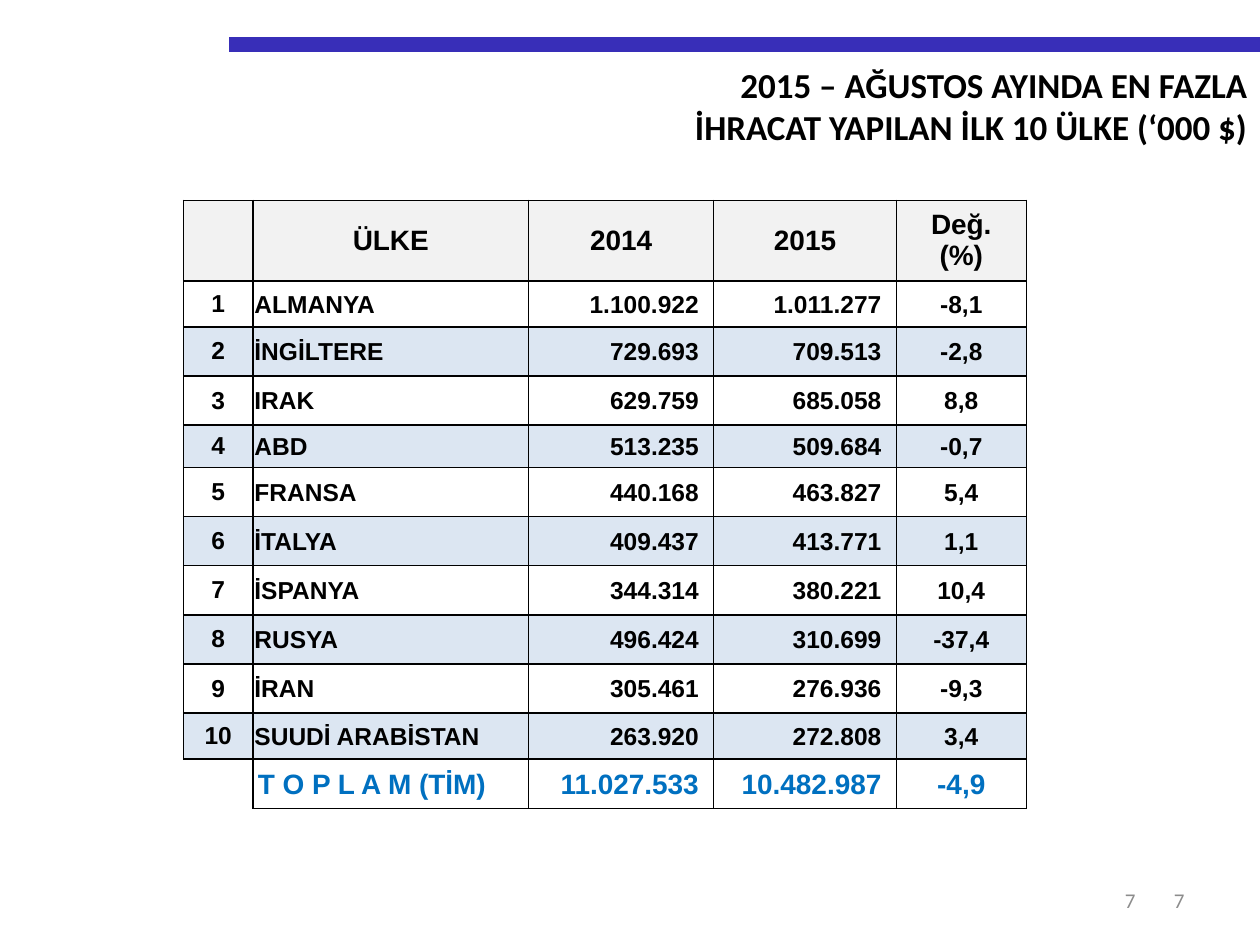
"""Build the slide with the top ten export countries of August 2015."""
from lxml.etree import SubElement
from pptx import Presentation
from pptx.dml.color import RGBColor
from pptx.enum.shapes import MSO_CONNECTOR as Connector
from pptx.enum.text import MSO_ANCHOR as Anchor, PP_ALIGN as Align
from pptx.oxml.ns import qn
from pptx.util import Cm, Pt

BLACK = RGBColor(0x00, 0x00, 0x00)
GRAY = RGBColor(0x8C, 0x8C, 0x8C)
INDIGO = RGBColor(0x38, 0x2E, 0xB8)
BLUE = RGBColor(0x00, 0x70, 0xC0)
HEADER_FILL = RGBColor(0xF2, 0xF2, 0xF2)
BAND_FILL = RGBColor(0xDC, 0xE6, 0xF2)

TITLE = "2015 – AĞUSTOS AYINDA EN FAZLA\nİHRACAT YAPILAN İLK 10 ÜLKE (‘000 $)"
PAGE_NUMBER = "7"
HEADER = ("", "ÜLKE", "2014", "2015", "Değ.\n(%)")
COUNTRIES = [
    ("ALMANYA", "1.100.922", "1.011.277", "-8,1"),
    ("İNGİLTERE", "729.693", "709.513", "-2,8"),
    ("IRAK", "629.759", "685.058", "8,8"),
    ("ABD", "513.235", "509.684", "-0,7"),
    ("FRANSA", "440.168", "463.827", "5,4"),
    ("İTALYA", "409.437", "413.771", "1,1"),
    ("İSPANYA", "344.314", "380.221", "10,4"),
    ("RUSYA", "496.424", "310.699", "-37,4"),
    ("İRAN", "305.461", "276.936", "-9,3"),
    ("SUUDİ ARABİSTAN", "263.920", "272.808", "3,4"),
]
TOTAL = ("", "T O P L A M (TİM)", "11.027.533", "10.482.987", "-4,9")

COLUMN_WIDTHS = (1.4, 5.56, 3.73, 3.68, 2.62)
ROW_HEIGHTS = (1.62, 0.93, 0.99, 0.99, 0.84, 0.99, 0.99, 0.99, 0.99, 0.99, 0.93, 0.99)
COLUMN_ALIGNS = (Align.CENTER, Align.LEFT, Align.RIGHT, Align.RIGHT, Align.CENTER)
WIDE_MARGINS = (0.25, 0.13, 0.25, 0.13)
COLUMN_MARGINS = (
    WIDE_MARGINS,
    (0.03, 0.03, 0.03, 0),
    (0.03, 0.03, 0.3, 0),
    (0.03, 0.03, 0.3, 0),
    (0.03, 0.03, 0.03, 0),
)
TOTAL_LABEL_MARGINS = (0.1, 0.03, 0.03, 0)
ALL_SIDES = ("L", "R", "T", "B")


def write(frame, text, align, size, color, font, bold):
    """Fill a text frame and format all of its paragraphs."""
    frame.text = text
    for para in frame.paragraphs:
        para.alignment = align
        para.font.size = Pt(size)
        for span in para.runs:
            span.font.size = Pt(size)
            span.font.name = font
            span.font.bold = bold
            span.font.color.rgb = color


def add_text(page, place, text, size, color, bold=False, anchor=Anchor.TOP):
    """Add a right-aligned text box."""
    box = page.shapes.add_textbox(*map(Cm, place))
    box.text_frame.word_wrap = True
    box.text_frame.vertical_anchor = anchor
    write(box.text_frame, text, Align.RIGHT, size, color, "Calibri", bold)


def set_borders(cell, visible):
    """Draw the visible sides of a cell in black and hide the others."""
    properties = cell._tc.get_or_add_tcPr()
    for index, side in enumerate(ALL_SIDES):
        line = properties.makeelement(qn("a:ln" + side), {"w": str(Pt(1))})
        properties.insert(index, line)
        if side in visible:
            fill = SubElement(line, qn("a:solidFill"))
            SubElement(fill, qn("a:srgbClr"), val=str(BLACK))
        else:
            SubElement(line, qn("a:noFill"))


def style_cell(cell, row, column, text, last):
    """Write, fill, align and frame one table cell."""
    margins, align, color = COLUMN_MARGINS[column], COLUMN_ALIGNS[column], BLACK
    if row == 0:
        margins, align = WIDE_MARGINS, Align.CENTER
    elif row == last:
        color = BLUE
        if column < 2:
            margins = TOTAL_LABEL_MARGINS
    cell.margin_left, cell.margin_top, cell.margin_right, cell.margin_bottom = map(Cm, margins)
    cell.vertical_anchor = Anchor.MIDDLE
    write(cell.text_frame, text, align, 16 if row in (0, last) else 14, color, "Arial", True)
    if row == 0 or (row % 2 == 0 and row != last):
        cell.fill.solid()
        cell.fill.fore_color.rgb = BAND_FILL if row else HEADER_FILL
    else:
        cell.fill.background()
    set_borders(cell, ("T", "R") if (row, column) == (last, 0) else ALL_SIDES)


def add_export_table(page):
    """Add the ranking with its header and total rows."""
    ranked = [(str(rank), *country) for rank, country in enumerate(COUNTRIES, 1)]
    rows = [HEADER, *ranked, TOTAL]
    frame = page.shapes.add_table(
        len(rows), len(HEADER), Cm(3.7), Cm(4.04),
        Cm(sum(COLUMN_WIDTHS)), Cm(sum(ROW_HEIGHTS)))
    table = frame.table
    table.first_row = table.horz_banding = False
    for column, width in zip(table.columns, COLUMN_WIDTHS):
        column.width = Cm(width)
    for row, height in zip(table.rows, ROW_HEIGHTS):
        row.height = Cm(height)
    for row, texts in enumerate(rows):
        for column, text in enumerate(texts):
            style_cell(table.cell(row, column), row, column, text, len(rows) - 1)


def main():
    """Create the deck and save it."""
    deck = Presentation()
    deck.slide_width, deck.slide_height = Cm(25.4), Cm(19.05)
    page = deck.slides.add_slide(deck.slide_layouts[6])

    rule = page.shapes.add_connector(Connector.STRAIGHT, Cm(4.62), Cm(0.9), Cm(25.4), Cm(0.9))
    rule.line.color.rgb = INDIGO
    rule.line.width = Pt(8.5)
    SubElement(rule._element.spPr, qn("a:effectLst"))

    for place in ((18.2, 17.65, 5.93, 1.01), (17.8, 17.65, 5.34, 1.01)):
        add_text(page, place, PAGE_NUMBER, 12, GRAY, anchor=Anchor.MIDDLE)
    add_text(page, (2.7, 1.15, 22.7, 1.96), TITLE, 20, BLACK, bold=True)
    add_export_table(page)
    deck.save("out.pptx")


if __name__ == "__main__":
    main()
